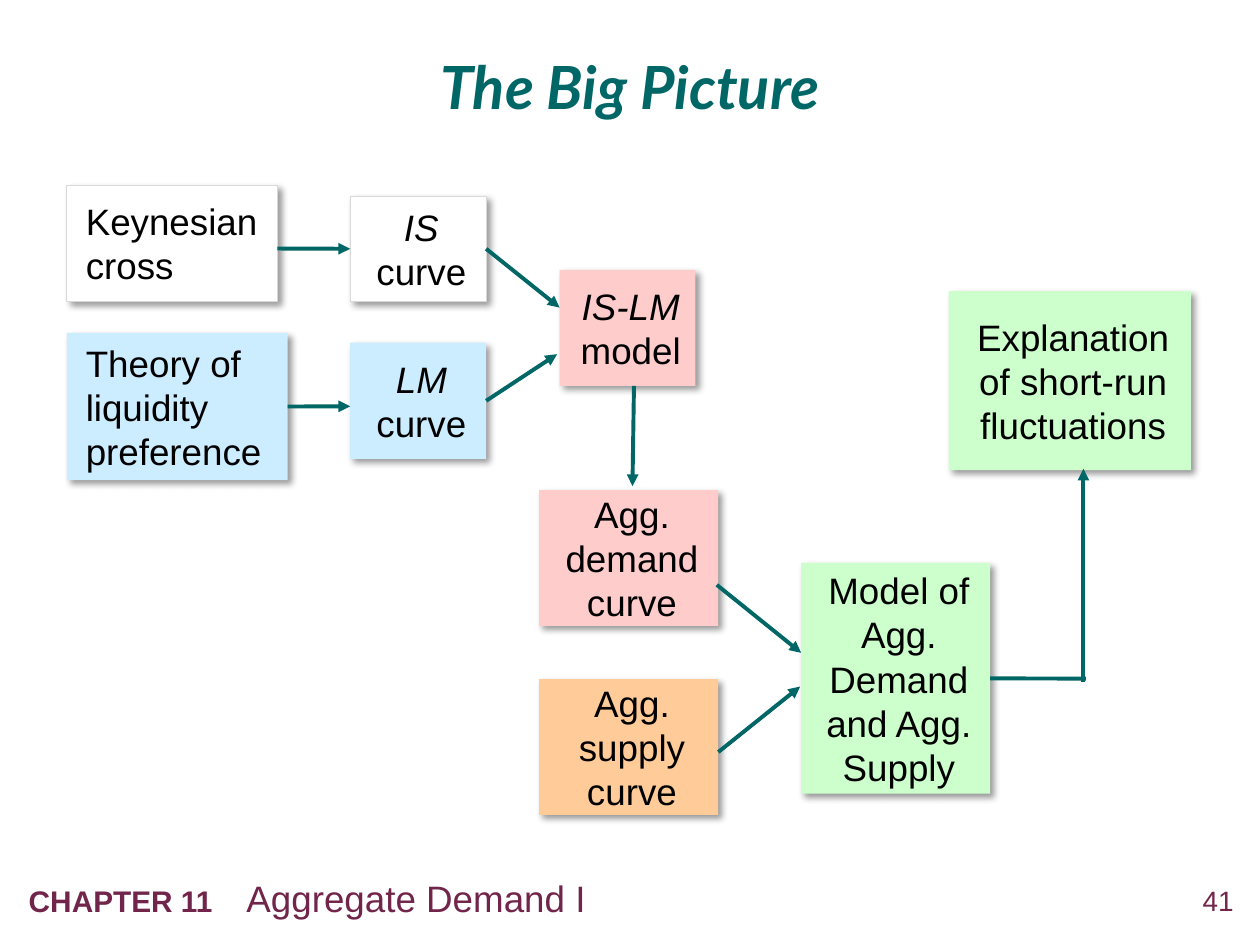
import pptx
import pptx.util
import pptx.dml.color
import pptx.enum.shapes
import pptx.enum.text
import pptx.oxml
import pptx.oxml.ns
from pptx.util import Cm, Pt

TEAL = "006666"
PLUM = "71254B"
ALIGN = pptx.enum.text.PP_ALIGN
MIDDLE = pptx.enum.text.MSO_ANCHOR.MIDDLE
NS = pptx.oxml.ns.nsdecls("a")
SHADOW = (
    f'<a:effectLst {NS}><a:outerShdw blurRad="50800" dist="38100" dir="2700000" '
    'algn="tl" rotWithShape="0"><a:srgbClr val="000000"><a:alpha val="40000"/>'
    "</a:srgbClr></a:outerShdw></a:effectLst>"
)


def color(value):
    """Return the RGB colour of a hex string."""
    return pptx.dml.color.RGBColor.from_string(value)


def style(r, size, ink, name="Arial", bold=False, italic=False):
    """Format one run."""
    r.font.size, r.font.name = Pt(size), name
    r.font.bold, r.font.italic = bold, italic
    r.font.color.rgb = color(ink)


def set_margins(tf, left, top, right, bottom):
    """Set the insets of a text frame in centimetres and let it wrap."""
    tf.margin_left, tf.margin_top = Cm(left), Cm(top)
    tf.margin_right, tf.margin_bottom = Cm(right), Cm(bottom)
    tf.word_wrap = True


def add_text(s, x, y, w, h):
    """Add a wrapping text box without insets and return its text frame."""
    tf = s.shapes.add_textbox(Cm(x), Cm(y), Cm(w), Cm(h)).text_frame
    set_margins(tf, 0, 0, 0, 0)
    return tf


def add_card(s, x, y, w, h, text, fill, align=ALIGN.CENTER, italic_lead=False):
    """Add a shadowed box holding one concept."""
    sp = s.shapes.add_shape(
        pptx.enum.shapes.MSO_SHAPE.RECTANGLE, Cm(x), Cm(y), Cm(w), Cm(h))
    sp.fill.solid()
    sp.fill.fore_color.rgb = color(fill)
    if fill == "FFFFFF":
        sp.line.color.rgb = color("D9D9D9")
        sp.line.width = Pt(0.5)
    else:
        sp.line.fill.background()
    sp.element.spPr.append(pptx.oxml.parse_xml(SHADOW))
    tf = sp.text_frame
    set_margins(tf, 0.38, 0.13, 0.25, 0.13)
    tf.vertical_anchor = MIDDLE
    p = tf.paragraphs[0]
    p.text, p.alignment = text, align
    for i, r in enumerate(p.runs):
        style(r, 21, "000000", italic=italic_lead and i == 0)
    return sp


def add_arrow(s, x1, y1, x2, y2, head=True):
    """Add a straight teal line, with an arrowhead at its end if asked."""
    line = s.shapes.add_connector(
        pptx.enum.shapes.MSO_CONNECTOR.STRAIGHT, Cm(x1), Cm(y1), Cm(x2), Cm(y2))
    line.line.color.rgb = color(TEAL)
    line.line.width = Pt(2.25)
    if head:
        line.line._get_or_add_ln().append(
            pptx.oxml.parse_xml(f'<a:tailEnd {NS} type="triangle"/>'))
    line._element.spPr.append(pptx.oxml.parse_xml(f"<a:effectLst {NS}/>"))
    return line


def add_title(s, x, y, w, h):
    """Add the centred slide title."""
    tf = add_text(s, x, y, w, h)
    tf.vertical_anchor = MIDDLE
    p = tf.paragraphs[0]
    p.text, p.alignment, p.line_spacing = "The Big Picture", ALIGN.CENTER, 0.95
    style(p.runs[0], 34, TEAL, "Lato", bold=True, italic=True)


def add_diagram(s, x, y):
    """Add the concept boxes and the arrows that lead from one to the next."""
    cards = {
        "cross": (0, 0, 4.24, 2.34, "Keynesian\ncross", "FFFFFF", ALIGN.LEFT),
        "theory": (0, 2.98, 4.45, 2.97, "Theory of liquidity preference",
                   "CCECFF", ALIGN.LEFT),
        "is": (5.71, 0.23, 2.74, 2.11, "IS\ncurve", "FFFFFF", ALIGN.CENTER, True),
        "lm": (5.71, 3.18, 2.74, 2.34, "LM\ncurve", "CCECFF", ALIGN.CENTER, True),
        "islm": (9.93, 1.71, 2.74, 2.34, "IS-LM\nmodel", "FFCCCC",
                 ALIGN.CENTER, True),
        "demand": (9.52, 6.15, 3.61, 2.74, "Agg. demand\ncurve", "FFCCCC"),
        "supply": (9.52, 9.96, 3.61, 2.74, "Agg. supply\ncurve", "FFCC99"),
        "model": (14.8, 7.62, 3.81, 4.65,
                  "Model of Agg. Demand and Agg. Supply", "CCFFCC"),
        "explanation": (17.78, 2.14, 4.88, 3.61,
                        "Explanation of short-run fluctuations", "CCFFCC"),
    }
    boxes = {key: add_card(s, x + dx, y + dy, *rest)
             for key, (dx, dy, *rest) in cards.items()}
    arrows = [
        (4.24, 1.28, 5.71, 1.28, True, None, "is"),
        (4.45, 4.46, 5.71, 4.46, True, "theory", None),
        (8.45, 1.28, 9.93, 2.47, True, "is", None),
        (8.45, 4.35, 9.88, 3.41, True, "lm", None),
        (11.43, 4.05, 11.4, 6.07, True, None, None),
        (13.1, 8.06, 14.8, 9.43, True, None, None),
        (13.13, 11.43, 14.78, 10.11, True, None, None),
        (18.61, 9.95, 20.54, 9.95, False, "model", None),
        (20.49, 10.01, 20.49, 5.72, True, None, None),
    ]
    for x1, y1, x2, y2, head, source, target in arrows:
        line = add_arrow(s, x + x1, y + y1, x + x2, y + y2, head)
        if source:
            line.begin_connect(boxes[source], 3)
        if target:
            line.end_connect(boxes[target], 1)


def add_footer(s, x, y, w, h):
    """Add the chapter line at the left and the page number at the right."""
    tf = add_text(s, x, y, 20.78, h)
    set_margins(tf, 0.25, 0.13, 0.25, 0.13)
    p = tf.paragraphs[0]
    p._p.get_or_add_pPr().append(pptx.oxml.parse_xml(
        f'<a:tabLst {NS}><a:tab pos="{Cm(4.39)}" algn="l"/></a:tabLst>'))
    for text, size, bold in (("CHAPTER 11\t", 17, True),
                             ("Aggregate Demand I", 21, False)):
        r = p.add_run()
        r.text = text
        style(r, size, PLUM, bold=bold)
    p = add_text(s, x + w - 1.4, y + 0.28, 1.4, 0.81).paragraphs[0]
    p.text, p.alignment = "41", ALIGN.RIGHT
    style(p.runs[0], 16, PLUM)


def main():
    """Build the slide and save it."""
    prs = pptx.Presentation()
    prs.slide_width, prs.slide_height = Cm(25.4), Cm(19.05)
    s = prs.slides.add_slide(prs.slide_layouts[6])
    add_title(s, 0, 0.41, 25.4, 2.79)
    add_diagram(s, 1.35, 3.73)
    add_footer(s, 0.33, 17.53, 24.54, 1.14)
    prs.save("out.pptx")


if __name__ == "__main__":
    main()
